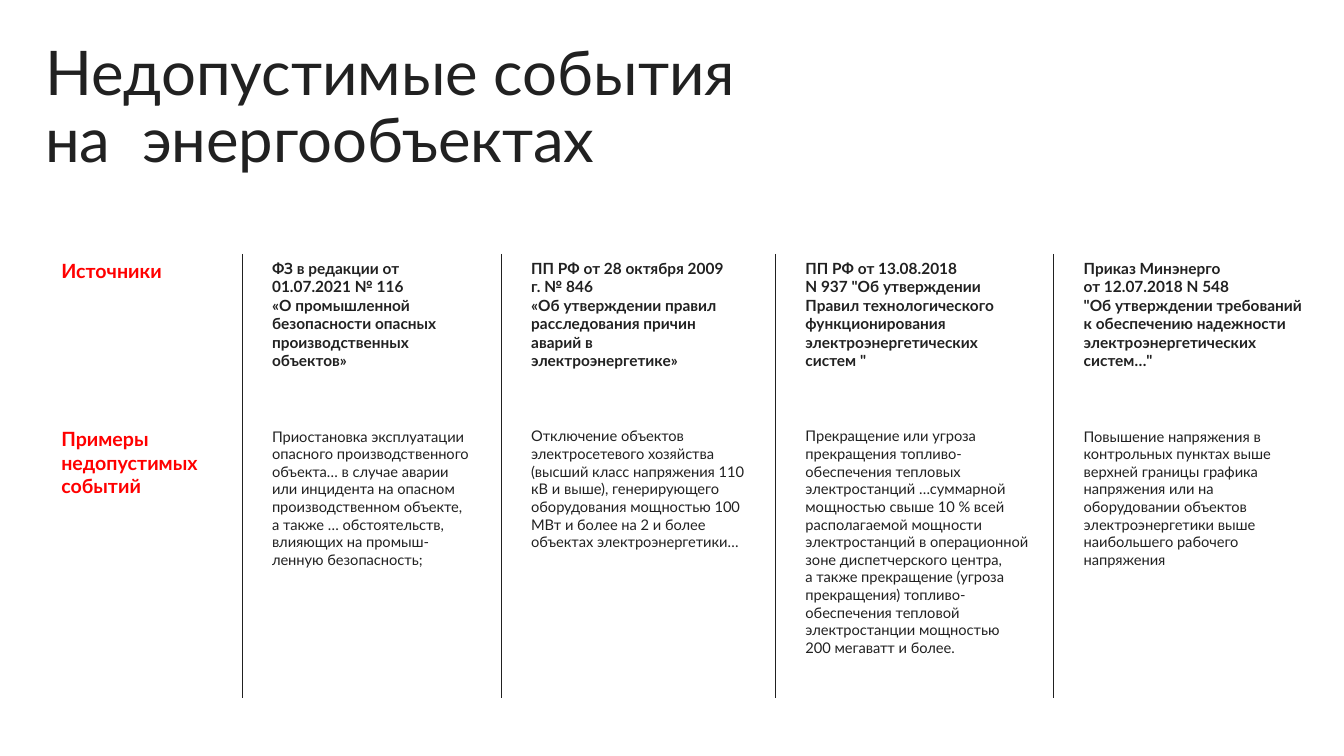
from dataclasses import dataclass

from lxml import etree
from pptx import Presentation
from pptx.dml.color import RGBColor
from pptx.enum.shapes import MSO_CONNECTOR
from pptx.enum.text import MSO_ANCHOR, MSO_AUTO_SIZE
from pptx.oxml.ns import qn
from pptx.util import Inches, Pt

STRAIGHT = MSO_CONNECTOR.STRAIGHT
TOP = MSO_ANCHOR.TOP
FIT_NONE = MSO_AUTO_SIZE.NONE
FIT_SHAPE = MSO_AUTO_SIZE.SHAPE_TO_FIT_TEXT


@dataclass(frozen=True)
class Theme:
    font: str = "Lato"
    ink: RGBColor = RGBColor(0x21, 0x21, 0x21)
    accent: RGBColor = RGBColor(0xFF, 0x00, 0x00)
    title: float = 44
    title_leading: float = 48
    label: float = 14
    source: float = 11
    example: float = 10.5
    rule: float = 0.5


class Deck:
    def __init__(self, prs, theme):
        self.theme = theme
        self.slide = prs.slides.add_slide(prs.slide_layouts[6])

    def text(self, box, paragraphs, size, color, bold=False, fit=FIT_SHAPE, leading=None):
        sp = self.slide.shapes.add_textbox(*map(Inches, box))
        tf = sp.text_frame
        tf.word_wrap = True
        tf.auto_size = fit
        tf.vertical_anchor = TOP
        for i, text in enumerate(paragraphs):
            p = tf.add_paragraph() if i else tf.paragraphs[0]
            p.text = text
            p.font.name = self.theme.font
            p.font.size = Pt(size)
            p.font.bold = bold
            p.font.color.rgb = color
            if leading:
                p.line_spacing = Pt(leading)

    def title(self, box, text):
        t = self.theme
        self.text(box, [text], t.title, t.ink, fit=FIT_NONE, leading=t.title_leading)

    def label(self, box, text):
        self.text(box, [text], self.theme.label, self.theme.accent, bold=True)

    def source(self, box, text):
        self.text(box, [text], self.theme.source, self.theme.ink, bold=True)

    def example(self, box, paragraphs):
        self.text(box, paragraphs, self.theme.example, self.theme.ink)

    def rule(self, x, top, bottom):
        line = self.slide.shapes.add_connector(
            STRAIGHT, Inches(x), Inches(top), Inches(x), Inches(bottom))
        line.line.color.rgb = self.theme.ink
        line.line.width = Pt(self.theme.rule)
        etree.SubElement(line._element.spPr, qn("a:effectLst"))


SOURCES_TOP = 2.52
EXAMPLES_TOP = 4.19
RULE_BOTTOM = 6.92
LABEL_LEFT = 0.51
RULE_GAP = 0.2
SOURCE_HEIGHT = 1.21

LABELS = [
    (SOURCES_TOP, 1.39, 0.34, "Источники"),
    (EXAMPLES_TOP, 1.9, 0.81, "Примеры недопустимых событий"),
]

COLUMNS = [
    (2.4, 2.12,
     "ФЗ в редакции от 01.07.2021 № 116 \n"
     "«О промышленной безопасности опасных производственных объектов»",
     2.4, 1.51,
     ["Приостановка эксплуатации опасного производственного объекта… в случае аварии \n"
      "или инцидента на опасном производственном объекте, \n"
      "а также … обстоятельств, влияющих на промыш-\n"
      "ленную безопасность;"]),
    (4.97, 2.12,
     "ПП РФ от 28 октября 2009 г. № 846 \n"
     "«Об утверждении правил расследования причин аварий в электроэнергетике»",
     2.4, 1.34,
     ["Отключение объектов электросетевого хозяйства (высший класс напряжения "
      "110 кВ и выше), генерирующего оборудования мощностью 100 МВт и более "
      "на 2 и более объектах электроэнергетики…"]),
    (7.69, 2.36,
     "ПП РФ от 13.08.2018 \n"
     'N 937 "Об утверждении Правил технологического функционирования '
     'электроэнергетических систем "',
     2.51, 2.4,
     ["Прекращение или угроза прекращения топливо-обеспечения тепловых",
      "электростанций …суммарной мощностью свыше 10 % всей располагаемой мощности "
      "электростанций в операционной зоне диспетчерского центра, \n"
      "а также прекращение (угроза прекращения) топливо-обеспечения тепловой "
      "электростанции мощностью \n"
      "200 мегаватт и более."]),
    (10.45, 2.56,
     "Приказ Минэнерго\n"
     "от 12.07.2018 N 548 \n"
     '"Об утверждении требований \n'
     'к обеспечению надежности электроэнергетических систем…"',
     2.4, 1.51,
     ["Повышение напряжения в контрольных пунктах выше верхней границы графика",
      "напряжения или на оборудовании объектов электроэнергетики выше "
      "наибольшего рабочего напряжения"]),
]


def main():
    prs = Presentation()
    prs.slide_width = Inches(13.33)
    prs.slide_height = Inches(7.5)
    deck = Deck(prs, Theme())

    deck.title((0.35, 0.35, 11.65, 1.39), "Недопустимые события \nна  энергообъектах")
    for top, width, height, text in LABELS:
        deck.label((LABEL_LEFT, top, width, height), text)
    for x, source_width, source, example_width, example_height, example in COLUMNS:
        left = x + RULE_GAP
        deck.source((left, SOURCES_TOP, source_width, SOURCE_HEIGHT), source)
        deck.example((left, EXAMPLES_TOP, example_width, example_height), example)
        deck.rule(x, SOURCES_TOP, RULE_BOTTOM)

    prs.save("out.pptx")


if __name__ == "__main__":
    main()
